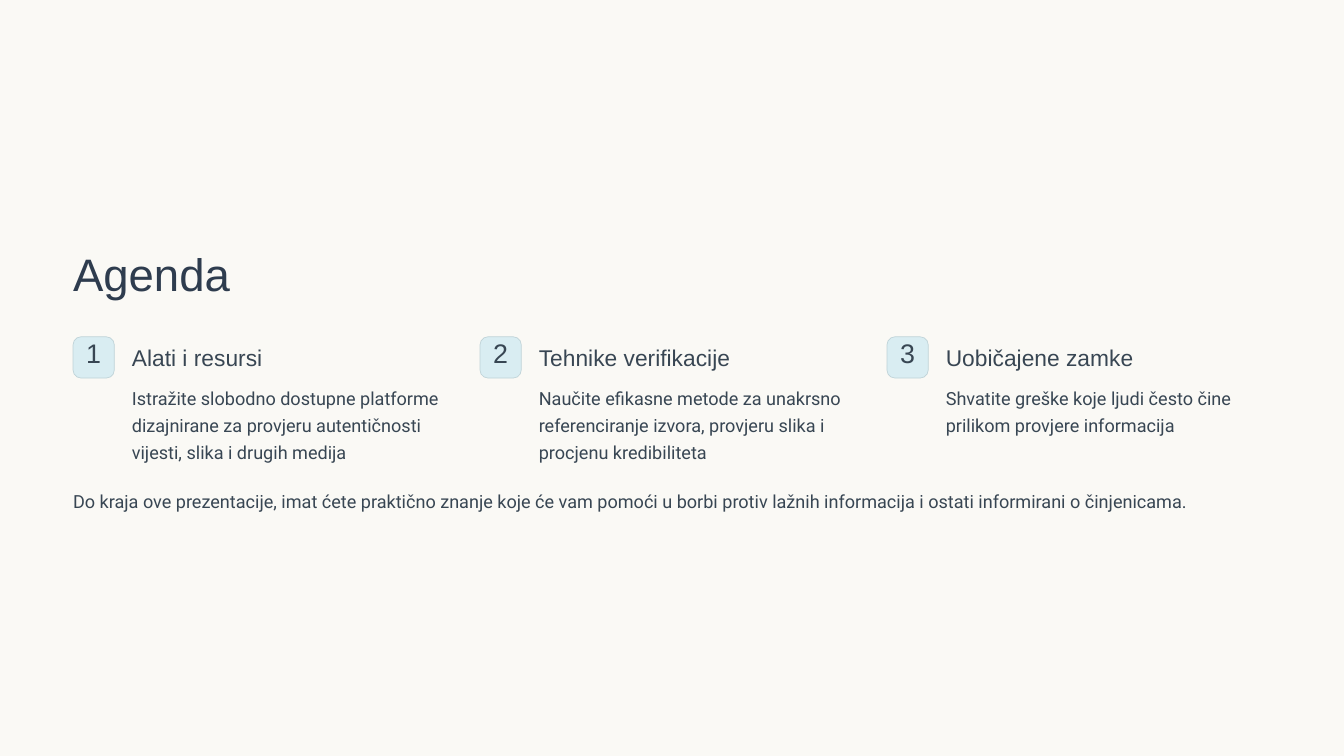
import pptx
import pptx.dml.color
import pptx.enum.shapes
import pptx.enum.text
import pptx.util

Inches = pptx.util.Inches
Align = pptx.enum.text.PP_ALIGN

COLOURS = {
    "paper": "FAF9F5",
    "title": "2E3C4E",
    "body": "384653",
    "badge": "D9EDF2",
    "badge_line": "BFD3D8",
}
LEFT = 0.87
COLUMN_STEP = 4.845
TEXT_INDENT = 0.7
TOPICS = [
    ("Alati i resursi",
     "Istražite slobodno dostupne platforme dizajnirane za provjeru "
     "autentičnosti vijesti, slika i drugih medija"),
    ("Tehnike verifikacije",
     "Naučite efikasne metode za unakrsno referenciranje izvora, "
     "provjeru slika i procjenu kredibiliteta"),
    ("Uobičajene zamke",
     "Shvatite greške koje ljudi često čine prilikom provjere informacija"),
]
CLOSING = ("Do kraja ove prezentacije, imat ćete praktično znanje koje će vam "
           "pomoći u borbi protiv lažnih informacija i ostati informirani "
           "o činjenicama.")


class AgendaPage:
    """Holds the style and the current slide, and adds its elements."""

    def __init__(self, deck):
        self.page = deck.slides.add_slide(deck.slide_layouts[5])
        self.paint(self.page.background.fill, "paper")

    def colour(self, name):
        return pptx.dml.color.RGBColor.from_string(COLOURS[name])

    def paint(self, fill, name):
        fill.solid()
        fill.fore_color.rgb = self.colour(name)

    def set_text(self, box, text, size, spacing, font="Arial", colour="body",
                 align=Align.LEFT, top_inset=0):
        frame = box.text_frame
        frame.word_wrap = True
        frame.auto_size = pptx.enum.text.MSO_AUTO_SIZE.NONE
        frame.vertical_anchor = pptx.enum.text.MSO_ANCHOR.TOP
        frame.margin_left = frame.margin_right = frame.margin_bottom = 0
        frame.margin_top = Inches(top_inset)
        frame.text = text
        para = frame.paragraphs[0]
        para.alignment = align
        para.line_spacing = pptx.util.Pt(spacing)
        para.space_before = pptx.util.Pt(0)
        para.font.name = font
        para.font.size = pptx.util.Pt(size)
        para.font.color.rgb = self.colour(colour)

    def title(self, text, left, top, width, height):
        box = self.page.shapes.title
        box.left, box.top = Inches(left), Inches(top)
        box.width, box.height = Inches(width), Inches(height)
        self.set_text(box, text, 39, 48.5, colour="title")

    def text(self, text, left, top, width, height, **style):
        box = self.page.shapes.add_textbox(
            Inches(left), Inches(top), Inches(width), Inches(height))
        self.set_text(box, text, **style)

    def badge(self, number, left, top, side):
        box = self.page.shapes.add_shape(
            pptx.enum.shapes.MSO_SHAPE.ROUNDED_RECTANGLE,
            Inches(left), Inches(top), Inches(side), Inches(side))
        box.adjustments[0] = 0.19
        box.shadow.inherit = False
        self.paint(box.fill, "badge")
        box.line.color.rgb = self.colour("badge_line")
        box.line.width = pptx.util.Pt(0.6)
        self.set_text(box, str(number), 23, 23, align=Align.CENTER, top_inset=0.04)


def main():
    deck = pptx.Presentation()
    deck.slide_width, deck.slide_height = Inches(16), Inches(9)
    agenda = AgendaPage(deck)
    heading_style = {"size": 19.5, "spacing": 24}
    body_style = {"size": 15.5, "spacing": 23, "font": "Roboto"}

    agenda.title("Agenda", LEFT, 2.9, 5.43, 0.68)
    for index, (heading, detail) in enumerate(TOPICS):
        left = LEFT + index * COLUMN_STEP
        agenda.badge(index + 1, left, 4.01, 0.49)
        agenda.text(heading, left + TEXT_INDENT, 4.09, 2.84, 0.34, **heading_style)
        agenda.text(detail, left + TEXT_INDENT, 4.55, 3.87, 0.98, **body_style)
    agenda.text(CLOSING, LEFT, 5.78, 14.26, 0.33, **body_style)
    deck.save("out.pptx")


if __name__ == "__main__":
    main()
